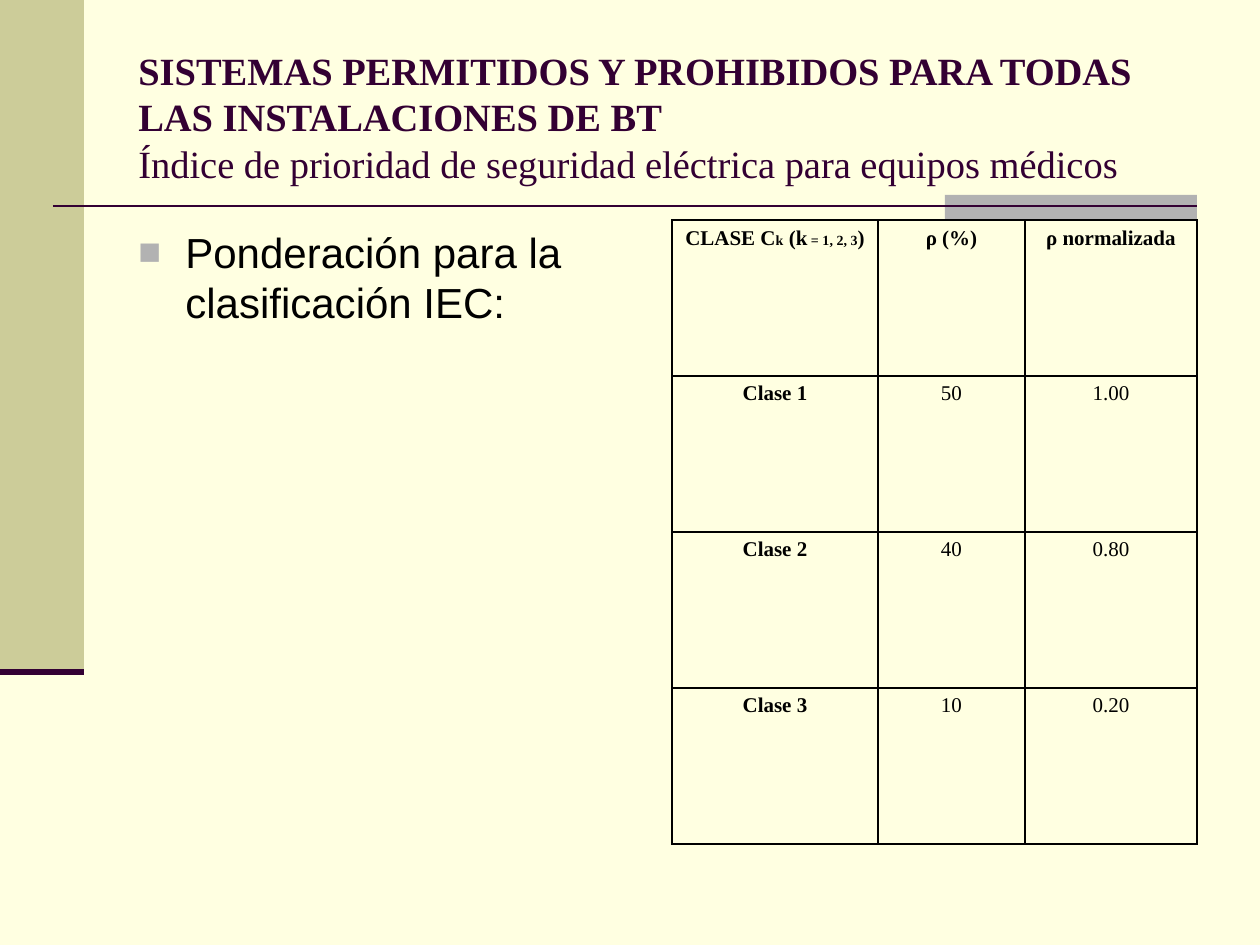
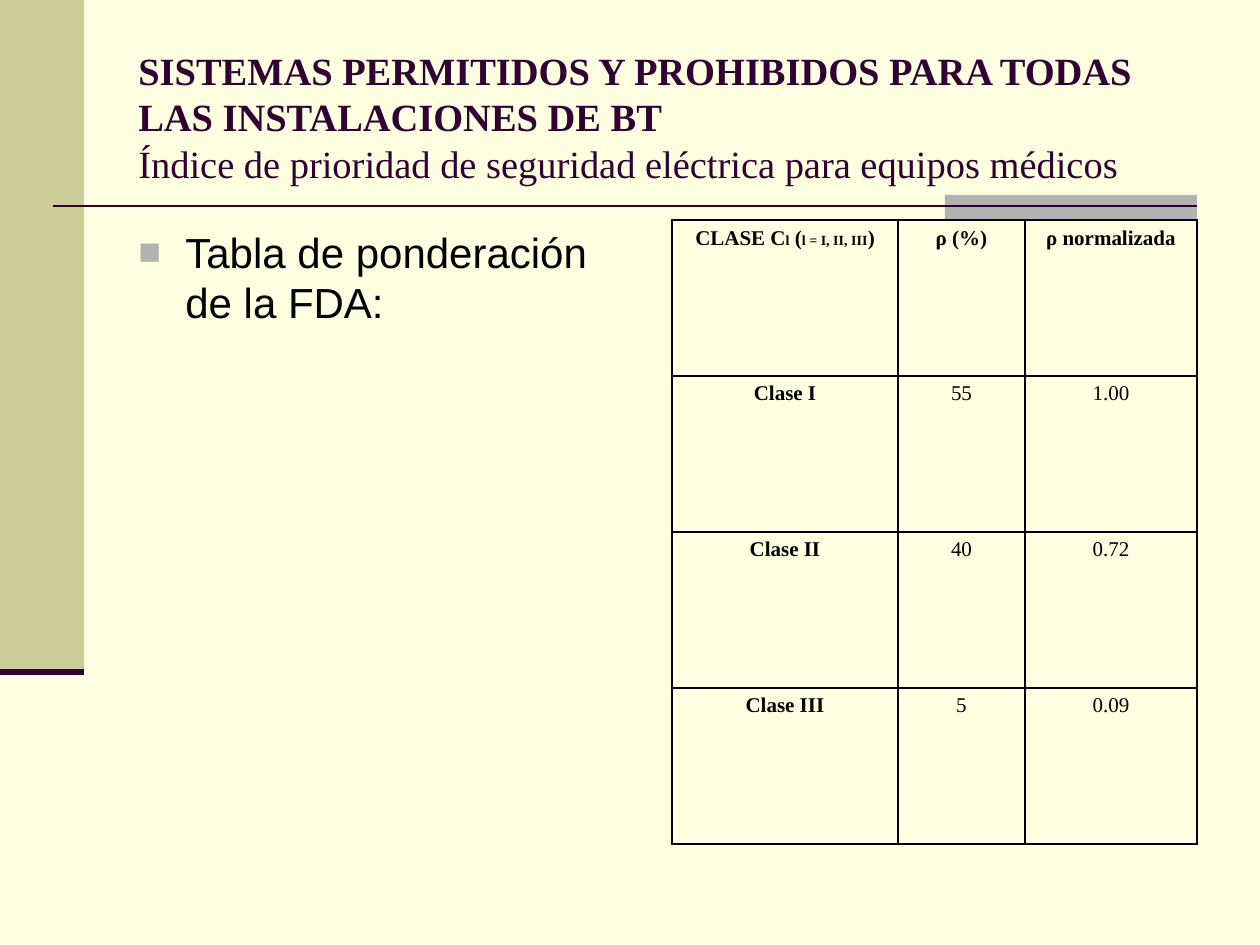
from lxml.etree import SubElement
from pptx import Presentation
from pptx.dml.color import RGBColor
from pptx.enum.shapes import MSO_CONNECTOR, MSO_SHAPE
from pptx.enum.text import MSO_ANCHOR, PP_ALIGN
from pptx.oxml import parse_xml
from pptx.oxml.ns import nsdecls, qn
from pptx.util import Emu, Pt

CREAM = RGBColor(0xFF, 0xFF, 0xE1)
OLIVE = RGBColor(0xCC, 0xCC, 0x99)
GREY = RGBColor(0xB2, 0xB2, 0xB2)
PLUM = RGBColor(0x33, 0x00, 0x33)
BLACK = RGBColor(0x00, 0x00, 0x00)

SERIF = "Times New Roman"
SANS = "Arial"
HANGING = 47
ROW_HEIGHT = 156

HEADING = "SISTEMAS PERMITIDOS Y PROHIBIDOS PARA TODAS LAS INSTALACIONES DE BT"
SUBHEADING = "Índice de prioridad de seguridad eléctrica para equipos médicos"

WEIGHTINGS = [
    {
        "statement": "Ponderación para la clasificación IEC:",
        "class_header": [("CLASE C", 12), ("k", 8), (" (k", 12), (" = 1, 2, 3", 8), (")", 12)],
        "widths": [206, 147, 172],
        "classes": [("Clase 1", "50", "1.00"), ("Clase 2", "40", "0.80"), ("Clase 3", "10", "0.20")],
    },
    {
        "statement": "Tabla de ponderación de la FDA:",
        "class_header": [("CLASE C", 12), ("l", 8), (" (", 12), ("l = I, II, III", 8), (")", 12)],
        "widths": [226, 127, 172],
        "classes": [("Clase I", "55", "1.00"), ("Clase II", "40", "0.72"), ("Clase III", "5", "0.09")],
    },
]


def px(length):
    return Emu(round(length * 914400 / 126))


class Deck:
    def __init__(self):
        self.presentation = Presentation()
        self.presentation.slide_width = px(1260)
        self.presentation.slide_height = px(945)
        self.slide = None

    def new_slide(self):
        self.slide = self.presentation.slides.add_slide(self.presentation.slide_layouts[6])
        background = self.slide.background.fill
        background.solid()
        background.fore_color.rgb = CREAM

    def band(self, left, top, width, height, color):
        band = self.slide.shapes.add_shape(
            MSO_SHAPE.RECTANGLE, px(left), px(top), px(width), px(height))
        band.shadow.inherit = False
        band.fill.solid()
        band.fill.fore_color.rgb = color
        band.line.fill.background()

    def rule(self, left, right, y, weight):
        rule = self.slide.shapes.add_connector(
            MSO_CONNECTOR.STRAIGHT, px(left), px(y), px(right), px(y))
        rule.line.color.rgb = PLUM
        rule.line.width = Pt(weight)
        SubElement(rule._element.spPr, qn("a:effectLst"))

    def frame(self, left, top, width, height, anchor):
        frame = self.slide.shapes.add_textbox(
            px(left), px(top), px(width), px(height)).text_frame
        frame.word_wrap = True
        frame.vertical_anchor = anchor
        return frame.paragraphs[0]

    def styled_run(self, paragraph, text, color=BLACK, **style):
        run = paragraph.add_run()
        run.text = text
        run.font.color.rgb = color
        for attribute, value in style.items():
            setattr(run.font, attribute, value)

    def hang(self, paragraph):
        properties = paragraph._p.get_or_add_pPr()
        properties.set("marL", str(px(HANGING)))
        properties.set("indent", str(-px(HANGING)))
        return properties

    def title(self, heading, subheading):
        title = self.frame(126, 38, 1071, 157, MSO_ANCHOR.MIDDLE)
        style = {"color": PLUM, "name": SERIF, "size": Pt(22)}
        self.styled_run(title, heading, bold=True, **style)
        title.add_line_break()
        self.styled_run(title, subheading, bold=False, **style)

    def bullet(self, text):
        bullet = self.frame(126, 220, 525, 624, MSO_ANCHOR.TOP)
        bullet.space_before = Pt(4.8)
        properties = self.hang(bullet)
        for markup in (
            f'<a:buClr {nsdecls("a")}><a:srgbClr val="{GREY}"/></a:buClr>',
            f'<a:buSzPct {nsdecls("a")} val="90000"/>',
            f'<a:buFont {nsdecls("a")} typeface="{SANS}"/>',
            f'<a:buChar {nsdecls("a")} char="■"/>',
        ):
            properties.append(parse_xml(markup))
        self.styled_run(bullet, text, name=SANS, size=Pt(24))

    def cell(self, cell, pieces, bold):
        cell.fill.background()
        for position, side in enumerate(("lnL", "lnR", "lnT", "lnB")):
            border = parse_xml(
                f'<a:{side} {nsdecls("a")} w="{Pt(1)}"><a:solidFill>'
                f'<a:srgbClr val="{BLACK}"/></a:solidFill></a:{side}>')
            cell._tc.get_or_add_tcPr().insert(position, border)
        paragraph = cell.text_frame.paragraphs[0]
        paragraph.alignment = PP_ALIGN.CENTER
        self.hang(paragraph)
        for text, size in pieces:
            self.styled_run(paragraph, text, name=SERIF, size=Pt(size), bold=bold)

    def table(self, class_header, widths, classes):
        header = [class_header, [("ρ (%)", 12)], [("ρ normalizada", 12)]]
        rows = [header] + [[[(value, 12)] for value in row] for row in classes]
        table = self.slide.shapes.add_table(
            len(rows), len(widths), px(672), px(220),
            px(sum(widths)), px(ROW_HEIGHT * len(rows))).table
        for attribute in ("first_row", "horz_banding"):
            setattr(table, attribute, False)
        for column, width in zip(table.columns, widths):
            column.width = px(width)
        for r, row in enumerate(rows):
            table.rows[r].height = px(ROW_HEIGHT)
            for c, pieces in enumerate(row):
                self.cell(table.cell(r, c), pieces, bold=r == 0 or c == 0)

    def weighting_slide(self, statement, **weights):
        self.new_slide()
        self.band(0, 0, 84, 672, OLIVE)
        self.band(945, 195, 252, 25, GREY)
        self.rule(53, 1197, 206, 1.5)
        self.rule(0, 84, 672, 3.5)
        self.title(HEADING, SUBHEADING)
        self.bullet(statement)
        self.table(**weights)


def main():
    deck = Deck()
    for weighting in WEIGHTINGS:
        deck.weighting_slide(**weighting)
    deck.presentation.save("out.pptx")


if __name__ == "__main__":
    main()
